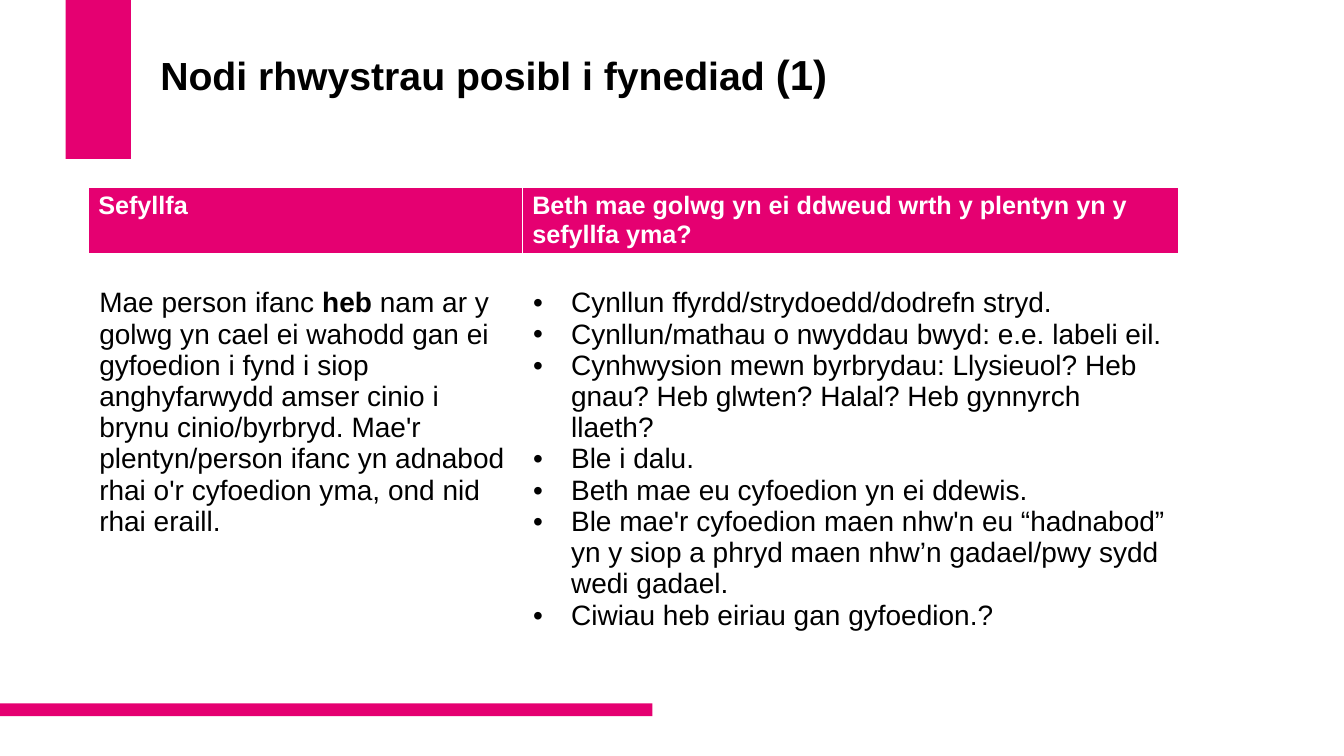
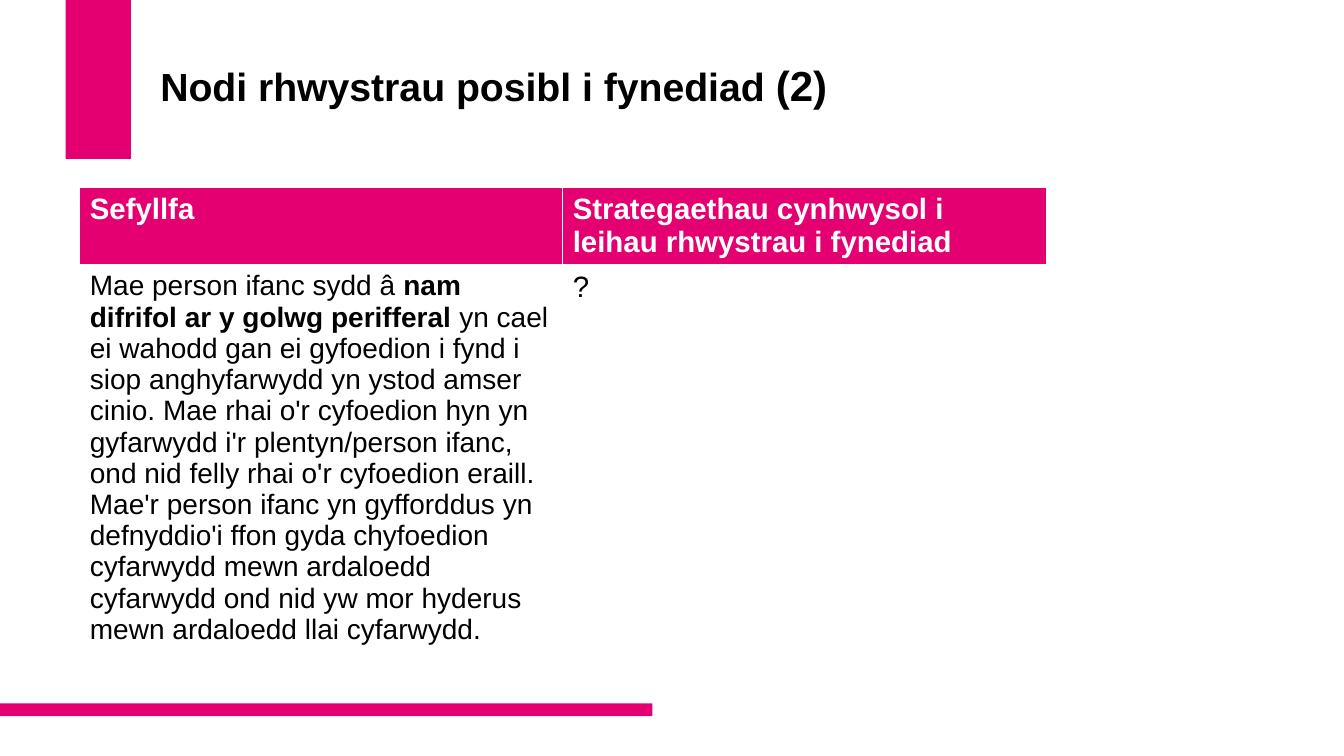
import dataclasses

import lxml.etree
import pptx
import pptx.dml.color
import pptx.enum.shapes
import pptx.enum.text
import pptx.oxml.ns
import pptx.util

Pt = pptx.util.Pt
qn = pptx.oxml.ns.qn


# Colours, font and type sizes shared by both slides
@dataclasses.dataclass(frozen=True)
class Theme:
    accent: str = "E50071"
    ink: str = "000000"
    paper: str = "FFFFFF"
    font: str = "Arial"
    title_size: float = 28
    number_size: float = 30
    body_size: float = 20
    list_indent: float = 27


THEME = Theme()


def rgb(colour):
    return pptx.dml.color.RGBColor.from_string(colour)


def style(paragraph, colour, bold, size=None):
    paragraph.font.name = THEME.font
    paragraph.font.color.rgb = rgb(colour)
    paragraph.font.bold = bold
    if size:
        paragraph.font.size = Pt(size)


# Bands that belong to the layout
def add_layout_bands(slide):
    bands = [(46.8, 0, 46.8, 113.6), (0, 502.4, 466, 9.2)]
    for box in bands:
        band = slide.shapes.add_shape(
            pptx.enum.shapes.MSO_SHAPE.RECTANGLE, *map(Pt, box))
        band.shadow.inherit = False
        band.fill.solid()
        band.fill.fore_color.rgb = rgb(THEME.accent)
        band.line.fill.background()
        slide.slide_layout.shapes.element.insert(2, band.element)


def set_title(slide, number, height):
    title = slide.shapes.title
    title.left, title.top = Pt(107.3), Pt(28.8)
    title.width, title.height = Pt(691), Pt(height)
    frame = title.text_frame
    frame.auto_size = pptx.enum.text.MSO_AUTO_SIZE.NONE
    frame.vertical_anchor = pptx.enum.text.MSO_ANCHOR.MIDDLE
    frame.margin_bottom = Pt(40)
    paragraph = frame.paragraphs[0]
    paragraph.alignment = pptx.enum.text.PP_ALIGN.LEFT
    paragraph.line_spacing = 0.9
    style(paragraph, THEME.ink, True)
    for text, size in [("Nodi rhwystrau posibl i fynediad ", THEME.title_size),
                       (f"({number})", THEME.number_size)]:
        run = paragraph.add_run()
        run.text = text
        run.font.size = Pt(size)


# Table parts
def set_borders(cell):
    properties = cell._tc.get_or_add_tcPr()
    for position, side in enumerate(("lnL", "lnR", "lnT", "lnB")):
        line = lxml.etree.Element(qn(f"a:{side}"), w=str(Pt(1)))
        fill = lxml.etree.SubElement(line, qn("a:solidFill"))
        lxml.etree.SubElement(fill, qn("a:srgbClr"), val=THEME.paper)
        properties.insert(position, line)


def format_cell(cell, fill, margins):
    cell.fill.solid()
    cell.fill.fore_color.rgb = rgb(fill)
    set_borders(cell)
    side, top, bottom = margins
    cell.margin_left = cell.margin_right = Pt(side)
    cell.margin_top, cell.margin_bottom = Pt(top), Pt(bottom)


def add_bullet(paragraph):
    properties = paragraph._p.get_or_add_pPr()
    properties.set("marL", str(Pt(THEME.list_indent)))
    properties.set("indent", str(-Pt(THEME.list_indent)))
    lxml.etree.SubElement(properties, qn("a:buFont"), typeface=THEME.font)
    lxml.etree.SubElement(properties, qn("a:buChar"), char="•")


def write_heading(cell, text, size):
    cell.text = text
    style(cell.text_frame.paragraphs[0], THEME.paper, True, size)


def write_situation(cell, before, emphasis, after):
    paragraph = cell.text_frame.paragraphs[0]
    style(paragraph, THEME.ink, False, THEME.body_size)
    for text in (before, emphasis, after):
        run = paragraph.add_run()
        run.text = text
        run.font.bold = text == emphasis


def write_list(cell, items):
    cell.text = "\n".join(items)
    for paragraph in cell.text_frame.paragraphs:
        add_bullet(paragraph)
        style(paragraph, THEME.ink, False, THEME.body_size)


def add_situation_table(slide, left, widths, header_height, headings,
                        heading_size, header_margins, body_margins):
    heights = (header_height, 302)
    table = slide.shapes.add_table(
        2, 2, Pt(left), Pt(133.5), Pt(sum(widths)), Pt(sum(heights))).table
    table.horz_banding = False
    for column, width in zip(table.columns, widths):
        column.width = Pt(width)
    for row, height in zip(table.rows, heights):
        row.height = Pt(height)
    for index, heading in enumerate(headings):
        header, body = table.cell(0, index), table.cell(1, index)
        format_cell(header, THEME.accent, header_margins)
        format_cell(body, THEME.paper, body_margins)
        write_heading(header, heading, heading_size)
    return table.cell(1, 0), table.cell(1, 1)


# Slides
def build_sight_slide(slide):
    set_title(slide, 1, 88.6)
    situation, information = add_situation_table(
        slide, 63, (310, 469), 46,
        ("Sefyllfa",
         "Beth mae golwg yn ei ddweud wrth y plentyn yn y sefyllfa yma?"),
        18, (7.2, 3.6, 3.6), (7.9, 24.3, 3.6))
    write_situation(
        situation, "Mae person ifanc ", "heb ",
        "nam ar y golwg yn cael ei wahodd gan ei gyfoedion i fynd i siop "
        "anghyfarwydd amser cinio i brynu cinio/byrbryd. Mae'r plentyn/person "
        "ifanc yn adnabod rhai o'r cyfoedion yma, ond nid rhai eraill.")
    write_list(information, [
        "Cynllun ffyrdd/strydoedd/dodrefn stryd.",
        "Cynllun/mathau o nwyddau bwyd: e.e. labeli eil.",
        "Cynhwysion mewn byrbrydau: Llysieuol? Heb gnau? Heb glwten? Halal? "
        "Heb gynnyrch llaeth?",
        "Ble i dalu.",
        "Beth mae eu cyfoedion yn ei ddewis.",
        "Ble mae'r cyfoedion maen nhw'n eu “hadnabod” yn y siop a phryd maen "
        "nhw’n gadael/pwy sydd wedi gadael.",
        "Ciwiau heb eiriau gan gyfoedion.?",
    ])


def build_strategies_slide(slide):
    set_title(slide, 2, 104.4)
    heading_size = 21
    margins = (7.2, 4.3, 4.3)
    situation, strategies = add_situation_table(
        slide, 57, (345, 345.5), 53,
        ("Sefyllfa", "Strategaethau cynhwysol i leihau rhwystrau i fynediad"),
        heading_size, margins, margins)
    write_situation(
        situation, "Mae person ifanc sydd â ",
        "nam difrifol ar y golwg perifferal ",
        "yn cael ei wahodd gan ei gyfoedion i fynd i siop anghyfarwydd yn "
        "ystod amser cinio. Mae rhai o'r cyfoedion hyn yn gyfarwydd i'r "
        "plentyn/person ifanc, ond nid felly rhai o'r cyfoedion eraill. Mae'r "
        "person ifanc yn gyfforddus yn defnyddio'i ffon gyda chyfoedion "
        "cyfarwydd mewn ardaloedd cyfarwydd ond nid yw mor hyderus mewn "
        "ardaloedd llai cyfarwydd.")
    strategies.text = "?"
    style(strategies.text_frame.paragraphs[0], THEME.ink, False, heading_size)


def main():
    deck = pptx.Presentation()
    deck.slide_width, deck.slide_height = Pt(960), Pt(540)
    title_only = deck.slide_layouts[5]
    sight = deck.slides.add_slide(title_only)
    add_layout_bands(sight)
    build_sight_slide(sight)
    build_strategies_slide(deck.slides.add_slide(title_only))
    deck.save("out.pptx")


if __name__ == "__main__":
    main()
